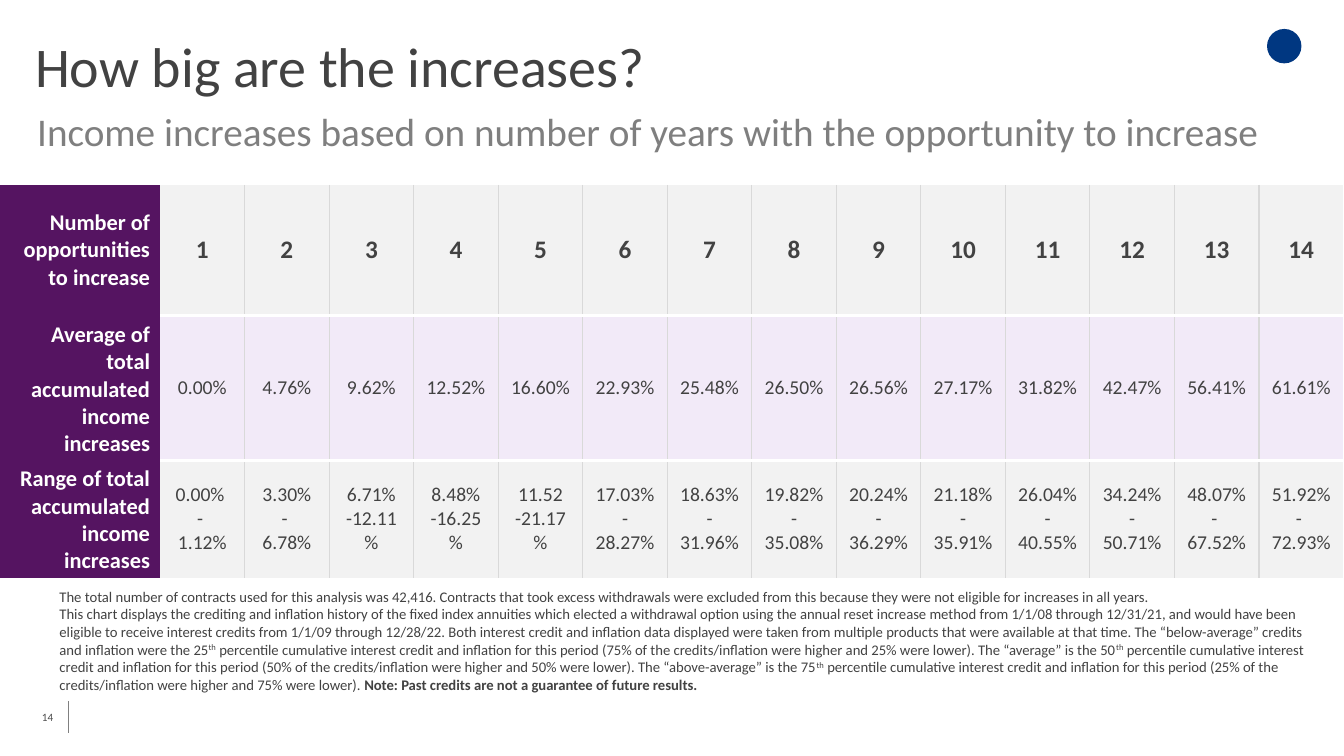
from pptx import Presentation as Deck
from pptx.dml.color import RGBColor as Rgb
from pptx.enum.shapes import MSO_CONNECTOR as Link, MSO_SHAPE as Form
from pptx.enum.text import MSO_ANCHOR as Anchor, PP_ALIGN as Align
from pptx.oxml.ns import qn
from pptx.util import Emu, Pt
from lxml.etree import SubElement as Sub

INK = Rgb(0x42, 0x42, 0x42)
GREY = Rgb(0x7F, 0x7F, 0x7F)
SLATE = Rgb(0x4D, 0x4D, 0x4D)
RULE = Rgb(0x80, 0x80, 0x80)
EDGE = Rgb(0xD9, 0xD9, 0xD9)
WHITE = Rgb(0xFF, 0xFF, 0xFF)
PLUM = Rgb(0x55, 0x14, 0x61)
PALE = Rgb(0xF2, 0xF2, 0xF2)
LILAC = Rgb(0xF2, 0xEA, 0xF8)
NAVY = Rgb(0x00, 0x37, 0x81)

WIDE, HIGH = 160, 90
UNIT = 76200
LABEL = 19.06
ROWS = 15.6, 14.4, 12
TINTS = PALE, LILAC, PALE
HEADS = (
    "Number of opportunities to increase",
    "Average of total accumulated income increases",
    "Range of total accumulated income increases",
)
MEANS = (
    "0.00% 4.76% 9.62% 12.52% 16.60% 22.93% 25.48% "
    "26.50% 26.56% 27.17% 31.82% 42.47% 56.41% 61.61%"
).split()
SPANS = [
    ["0.00% ", "- ", "1.12%"], ["3.30%", "- ", "6.78%"],
    ["6.71%", "-12.11%"], ["8.48%", "-16.25%"], ["11.52", "-21.17%"],
    ["17.03%-28.27%"], ["18.63%-31.96%"], ["19.82%-35.08%"],
    ["20.24%-36.29%"], ["21.18%-35.91%"], ["26.04%-40.55%"],
    ["34.24%-50.71%"], ["48.07% - ", "67.52%"], ["51.92% - ", "72.93%"],
]
RANK = ("th", "super")
SHARE = " percentile cumulative interest credit and inflation for this period "
NOTES = [
    "The total number of contracts used for this analysis was 42,416. Contracts that took "
    "excess withdrawals were excluded from this because they were not eligible for increases "
    "in all years.",
    [
        "This chart displays the crediting and inflation history of the fixed index annuities "
        "which elected a withdrawal option using the annual reset increase method from 1/1/08 "
        "through 12/31/21, and would have been eligible to receive interest credits from 1/1/09 "
        "through 12/28/22. Both interest credit and inflation data displayed were taken from "
        "multiple products that were available at that time. The “below-average” credits and "
        "inflation were the 25", RANK,
        SHARE + "(75% of the credits/inflation were higher and 25% were lower). "
        "The “average” is the 50", RANK,
        SHARE + "(50% of the credits/inflation were higher and 50% were lower). "
        "The “above-average” is the 75", RANK,
        SHARE + "(25% of the credits/inflation were higher and 75% were lower). ",
        ("Note: Past credits are not a guarantee of future results.", "bold"),
    ],
]


def write(frame, paras, size=14, color=INK, bold=False, align=Align.LEFT, lead=None):
    for i, para in enumerate(paras):
        line = frame.add_paragraph() if i else frame.paragraphs[0]
        line.alignment = align
        if lead:
            line.line_spacing = lead
        for part in [para] if isinstance(para, str) else para:
            words, mode = (part, "") if isinstance(part, str) else part
            run = line.add_run()
            run.text = words
            font = run.font
            font.name, font.size = "Calibri", Pt(size)
            font.bold = bold or mode == "bold"
            font.color.rgb = color
            if mode == "super":
                run._r.get_or_add_rPr().set("baseline", "30000")


class Page:
    """Draws styled elements on one slide, in grid columns and rows."""

    def __init__(self, deck):
        deck.slide_width, deck.slide_height = self.grid(WIDE, HIGH)
        self.shapes = deck.slides.add_slide(deck.slide_layouts[6]).shapes

    def grid(self, *cells):
        return [Emu(round(n * UNIT)) for n in cells]

    def text(self, box, paras, anchor=Anchor.TOP, inset=None, **style):
        frame = self.shapes.add_textbox(*self.grid(*box)).text_frame
        frame.word_wrap = True
        frame.vertical_anchor = anchor
        if inset is not None:
            frame.margin_left = frame.margin_right = inset
        write(frame, paras, **style)

    def line(self, ends, color, width):
        link = self.shapes.add_connector(Link.STRAIGHT, *self.grid(*ends))
        link.line.color.rgb = color
        link.line.width = Pt(width)
        Sub(link._element.spPr, qn("a:effectLst"))

    def disc(self, box, color):
        disc = self.shapes.add_shape(Form.OVAL, *self.grid(*box))
        disc.shadow.inherit = False
        disc.fill.solid()
        disc.fill.fore_color.rgb = color
        disc.line.fill.background()

    def border(self, cell, side, color, width):
        edge = Sub(cell._tc.get_or_add_tcPr(), qn("a:ln" + side))
        if color is None:
            edge.set("w", "0")
            Sub(edge, qn("a:noFill"))
        else:
            edge.set("w", str(Pt(width)))
            Sub(Sub(edge, qn("a:solidFill")), qn("a:srgbClr")).set("val", str(color))

    def cell(self, cell, paras, tint, edges, **style):
        for side, (color, width) in edges.items():
            self.border(cell, side, color, width)
        cell.fill.solid()
        cell.fill.fore_color.rgb = tint
        cell.vertical_anchor = Anchor.MIDDLE
        write(cell.text_frame, paras, **style)

    def table(self, top, rows):
        count = len(rows[0])
        box = self.grid(0, top, WIDE, sum(ROWS))
        table = self.shapes.add_table(len(rows), count + 1, *box).table
        table.first_row = table.horz_banding = False
        widths = [LABEL] + [(WIDE - LABEL) / count] * count
        for col, width in zip(table.columns, self.grid(*widths)):
            col.width = width
        for row, height in zip(table.rows, self.grid(*ROWS)):
            row.height = height
        none, thin, thick = (None, 0), (EDGE, 1), (WHITE, 2.25)
        for r, row in enumerate(rows):
            self.cell(table.cell(r, 0), [HEADS[r]], PLUM, dict.fromkeys("LRTB", none),
                      size=16, color=WHITE, bold=True, align=Align.RIGHT)
            for c, paras in enumerate(row, 1):
                edges = {
                    "L": thin if c > 1 else none,
                    "R": thin if c < count else none,
                    "T": thick if r else none,
                    "B": thick if r < len(rows) - 1 else none,
                }
                self.cell(table.cell(r, c), paras, TINTS[r], edges,
                          size=14 if r else 18, bold=not r, align=Align.CENTER)


def main():
    deck = Deck()
    page = Page(deck)
    page.disc((150.84, 3.45, 4.1, 4.1), NAVY)
    page.line((8.16, 83.5, 8.16, 87.25), RULE, 0.75)
    page.text((5, 83, 4.8, 4.8), ["14"], Anchor.MIDDLE, 0, size=8, color=SLATE)
    page.text((3, 4.1, 138.7, 9.4), ["How big are the increases?"], size=40, lead=0.9)
    page.table(22, [
        [[str(n)] for n in range(1, len(MEANS) + 1)],
        [[mean] for mean in MEANS],
        SPANS,
    ])
    page.text(
        (3.25, 12.85, 151.9, 7.2),
        ["Income increases based on number of years with the opportunity to increase"],
        size=28, color=GREY, lead=0.9,
    )
    page.text((5.9, 69.35, 152.65, 13.9), NOTES, size=10.5)
    deck.save("out.pptx")


if __name__ == "__main__":
    main()
